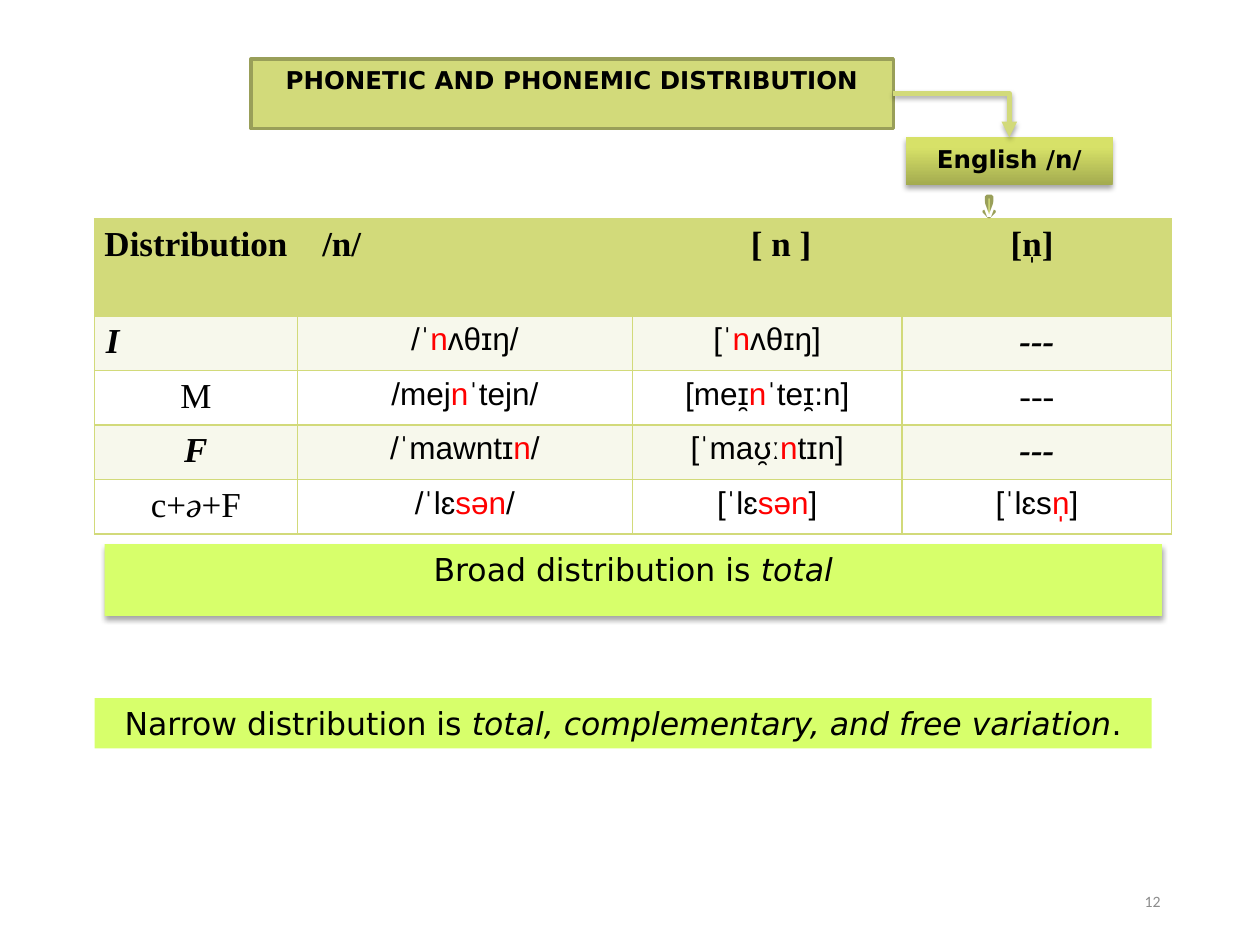
from pptx import Presentation
from pptx.dml.color import RGBColor
from pptx.enum.shapes import MSO_CONNECTOR as Link, MSO_SHAPE as Preset
from pptx.enum.text import MSO_ANCHOR as Anchor, MSO_AUTO_SIZE as AutoSize, PP_ALIGN as Align
from pptx.oxml import parse_xml
from pptx.oxml.ns import nsdecls, qn
from pptx.util import Pt

rgb = RGBColor.from_string
SANS, SERIF, PHONETIC = "DejaVu Sans", "Times New Roman", "Arial"
OLIVE, DARK_OLIVE, PALE, LIME = "D2DA7A", "999F59", "F7F8EC", "D7FF6B"
BLACK, WHITE, RED = "000000", "FFFFFF", "FF0000"


def add_run(para, text, font, size, color=BLACK, bold=False, italic=False):
    span = para.add_run()
    span.text = text
    span.font.name = font
    span.font.size = Pt(size)
    span.font.color.rgb = rgb(color)
    span.font.bold = bold
    span.font.italic = italic


def add_shadow(shape):
    """Add a soft shadow below; call after fill and line are set."""
    properties = shape._element.spPr
    for old in properties.findall(qn("a:effectLst")):
        properties.remove(old)
    properties.append(parse_xml(
        f'<a:effectLst {nsdecls("a")}><a:outerShdw blurRad="{Pt(3)}" dist="{Pt(1.8)}" '
        f'dir="5400000" rotWithShape="0"><a:srgbClr val="{BLACK}"><a:alpha val="35000"/>'
        '</a:srgbClr></a:outerShdw></a:effectLst>'))


deck = Presentation()
deck.slide_width, deck.slide_height = Pt(720), Pt(540)
page = deck.slides.add_slide(deck.slide_layouts[5])

# Title
title = page.shapes.title
title.left, title.top, title.width, title.height = Pt(143.3), Pt(33.8), Pt(367.2), Pt(39.6)
title.fill.solid()
title.fill.fore_color.rgb = rgb(OLIVE)
title.line.color.rgb = rgb(DARK_OLIVE)
title.line.width = Pt(2)
frame = title.text_frame
frame.auto_size = AutoSize.NONE
frame.vertical_anchor = Anchor.TOP
frame.margin_left = frame.margin_right = frame.margin_top = frame.margin_bottom = Pt(3.6)
frame.paragraphs[0].alignment = Align.CENTER
add_run(frame.paragraphs[0], "PHONETIC AND PHONEMIC DISTRIBUTION", SANS, 14, bold=True)

# Distribution table: in each cell, every second part between bars is highlighted
rows = [
    ("Distribution", "/n/", "[ n ]", "[n̩]"),
    ("I", "/ˈ|n|ʌθɪŋ/", "[ˈ|n|ʌθɪŋ]", "---"),
    ("M", "/mej|n|ˈtejn/", "[meɪ̯|n|ˈteɪ̯:n]", "---"),
    ("F", "/ˈmawntɪ|n|/", "[ˈmaʊ̯ː|n|tɪn]", "---"),
    ("c+|ə|+F", "/ˈlɛ|sən|/", "[ˈlɛ|sən|]", "[ˈlɛs|n̩|]"),
]
table = page.shapes.add_table(5, 4, Pt(54), Pt(125), Pt(615.6), Pt(180.3)).table
table.first_row = table.horz_banding = False
for column, width in zip(table.columns, (115.9, 191.5, 154.1, 154.1)):
    column.width = Pt(width)
for index, texts in enumerate(rows):
    table.rows[index].height = Pt(31.2 if index else 55.5)
    for position, text in enumerate(texts):
        cell = table.cell(index, position)
        cell.margin_left = cell.margin_right = cell.margin_top = cell.margin_bottom = Pt(3.6)
        for side in ("lnL", "lnR", "lnT", "lnB"):
            cell._tc.get_or_add_tcPr().append(parse_xml(
                f'<a:{side} {nsdecls("a")} w="{Pt(1)}"><a:solidFill>'
                f'<a:srgbClr val="{OLIVE}"/></a:solidFill></a:{side}>'))
        cell.fill.solid()
        cell.fill.fore_color.rgb = rgb(OLIVE if index == 0 else PALE if index % 2 else WHITE)
        para = cell.text_frame.paragraphs[0]
        para.alignment = Align.CENTER
        for part, piece in enumerate(text.split("|")):
            marked = part % 2 == 1
            if not piece:
                continue
            if index == 0:
                add_run(para, piece, SERIF, 20, bold=True)
            elif position == 0 or text == "---":
                strong = index % 2 == 1
                add_run(para, piece, SERIF, 20, bold=strong, italic=strong or marked)
            else:
                add_run(para, piece, PHONETIC, 18, RED if marked else BLACK)

for index, position, indent in ((0, 0, 5.7), (0, 1, 14.3), (1, 0, 6.5)):
    cell = table.cell(index, position)
    cell.text_frame.paragraphs[0].alignment = Align.LEFT
    cell.margin_left = Pt(indent)
table.cell(0, 2).margin_left = Pt(19.6)
table.cell(0, 3).margin_right = Pt(9)

# Language label and the two conclusions: place, fill, shadow, size, bold, (text, italic) runs
boxes = [
    ((517.7, 78.5, 118.1, 27.4), None, True, 14, True, [("English /n/", False)]),
    ((59.8, 311, 604.1, 41), LIME, True, 18, False,
     [("Broad distribution is ", False), ("total", True)]),
    ((54, 398.9, 604.1, 28.8), LIME, False, 18, False,
     [("Narrow distribution is ", False),
      ("total, complementary, and free variation", True), (".", False)]),
]
drawn = []
for place, color, shadow, size, bold, runs in boxes:
    box = page.shapes.add_shape(Preset.RECTANGLE, *map(Pt, place))
    box.shadow.inherit = False
    if color:
        box.fill.solid()
        box.fill.fore_color.rgb = rgb(color)
    else:
        box.fill.gradient()
        box.fill.gradient_angle = 90
        for stop, (offset, shade) in zip(box.fill.gradient_stops, ((0, "A3AB4F"), (0.8, "D7E168"))):
            stop.position = offset
            stop.color.rgb = rgb(shade)
    box.line.fill.background()
    if shadow:
        add_shadow(box)
    frame = box.text_frame
    frame.word_wrap = True
    frame.vertical_anchor = Anchor.TOP
    frame.margin_left = frame.margin_right = frame.margin_top = frame.margin_bottom = Pt(3.6)
    frame.paragraphs[0].alignment = Align.CENTER
    for text, italic in runs:
        add_run(frame.paragraphs[0], text, SANS, size, bold=bold, italic=italic)
    drawn.append(box)
label = drawn[0]

# Small arrow from the label to the table
arrow = page.shapes.add_shape(Preset.DOWN_ARROW, Pt(562.3), Pt(112.3), Pt(5.8), Pt(11.5))
arrow.shadow.inherit = False
arrow.fill.solid()
arrow.fill.fore_color.rgb = rgb(OLIVE)
arrow.line.color.rgb = rgb(DARK_OLIVE)
arrow.line.width = Pt(2)
frame = arrow.text_frame
frame.word_wrap = False
frame.vertical_anchor = Anchor.MIDDLE
frame.margin_left = frame.margin_right = frame.margin_top = frame.margin_bottom = 0
frame.paragraphs[0].alignment = Align.CENTER
add_run(frame.paragraphs[0], "v", SANS, 18, WHITE)

# Elbow from the title to the label, with a single bend
elbow = page.shapes.add_connector(Link.ELBOW, Pt(510.5), Pt(53.6), Pt(576.7), Pt(78.5))
elbow.begin_connect(title, 3)
elbow.end_connect(label, 0)
elbow._element.spPr.find(qn("a:prstGeom")).set("prst", "bentConnector2")
elbow.line.color.rgb = rgb(OLIVE)
elbow.line.width = Pt(3)
elbow.line._get_or_add_ln().append(parse_xml(f'<a:tailEnd {nsdecls("a")} type="triangle"/>'))
add_shadow(elbow)

# Page number
number = page.shapes.add_textbox(Pt(508.3), Pt(500.4), Pt(162), Pt(28.8))
number.text_frame.word_wrap = True
number.text_frame.vertical_anchor = Anchor.MIDDLE
number.text_frame.paragraphs[0].alignment = Align.RIGHT
add_run(number.text_frame.paragraphs[0], "12", "Calibri", 9, "8C8C8C")

deck.save("out.pptx")
